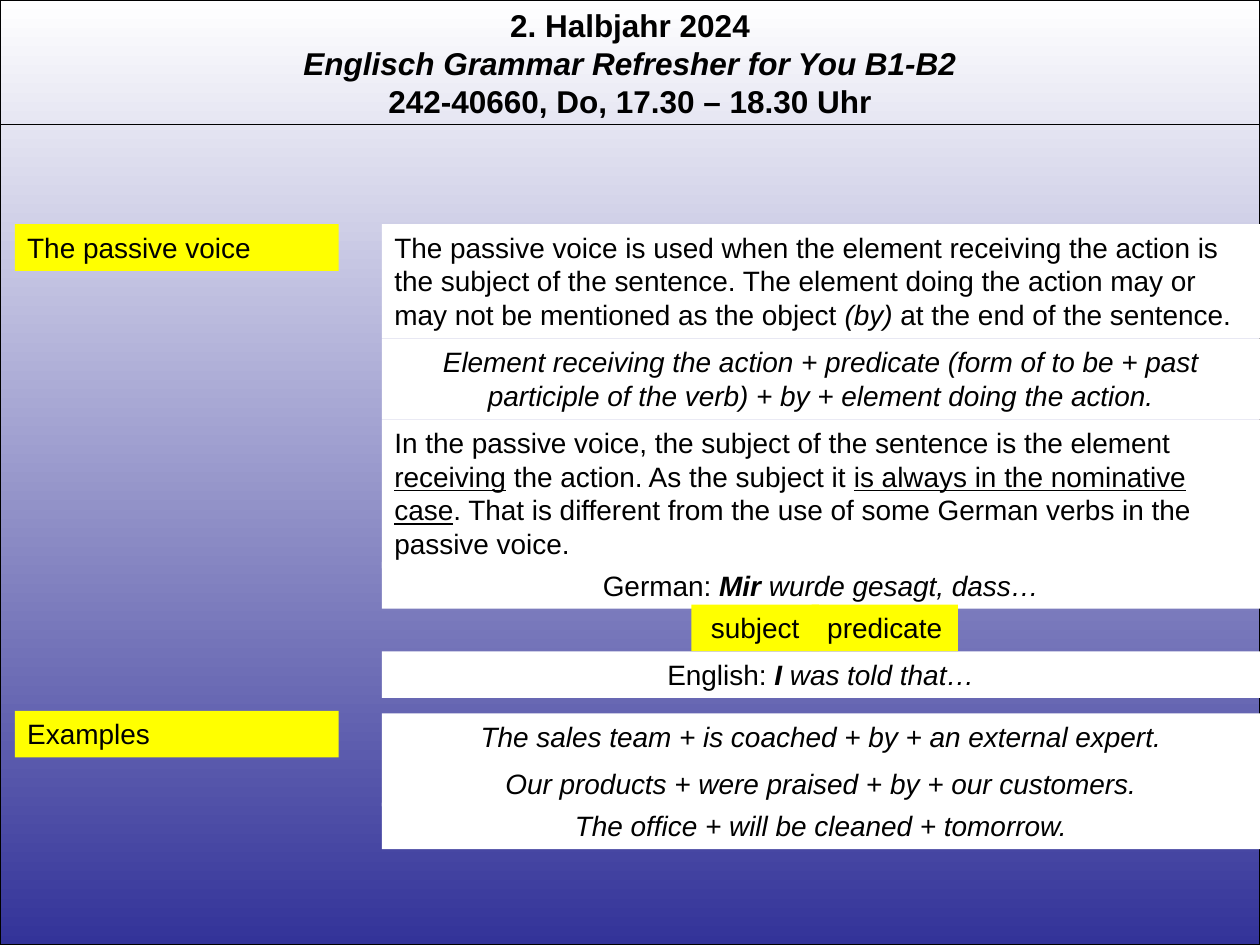
"""Build the grammar slide on the passive voice."""
from dataclasses import dataclass

import pptx
import pptx.dml.color
import pptx.enum.shapes
import pptx.enum.text
import pptx.oxml
import pptx.shapes.autoshape
import pptx.shapes.connector
import pptx.slide
import pptx.util
from pptx.util import Cm

SLIDE_WIDTH, SLIDE_HEIGHT = 25.4, 19.05
LABEL_LEFT, LABEL_WIDTH = 0.3, 6.53
PANEL_LEFT, PANEL_WIDTH = 7.7, 17.7
LINE_HEIGHT = 0.94
TAG_TOP = 12.19
WHITE, YELLOW, BLACK, INDIGO = "FFFFFF", "FFFF00", "000000", "333399"
LEFT = pptx.enum.text.PP_ALIGN.LEFT
CENTER = pptx.enum.text.PP_ALIGN.CENTER
RECTANGLE = pptx.enum.shapes.MSO_SHAPE.RECTANGLE


@dataclass(frozen=True)
class Run:
    text: str
    bold: bool = False
    italic: bool = False
    underline: bool = False


@dataclass(frozen=True)
class Box:
    left: float
    top: float
    width: float
    height: float
    fill: str
    alignment: pptx.enum.text.PP_ALIGN
    runs: tuple[Run, ...]


def panel(top: float, *runs: Run, height: float = LINE_HEIGHT, alignment=CENTER) -> Box:
    return Box(PANEL_LEFT, top, PANEL_WIDTH, height, WHITE, alignment, runs)


def label(top: float, text: str) -> Box:
    return Box(LABEL_LEFT, top, LABEL_WIDTH, LINE_HEIGHT, YELLOW, LEFT, (Run(text),))


def tag(left: float, width: float, text: str) -> Box:
    return Box(left, TAG_TOP, width, LINE_HEIGHT, YELLOW, CENTER, (Run(text),))


TITLE_LINES = (
    Run("2. Halbjahr 2024", bold=True),
    Run("Englisch Grammar Refresher for You B1-B2", bold=True, italic=True),
    Run("242-40660, Do, 17.30 – 18.30 Uhr", bold=True),
)
RULES = (
    label(4.52, "The passive voice"),
    panel(6.83, Run("Element receiving the action + predicate (form of to be + past participle "
                    "of the verb) + by + element doing the action.", italic=True), height=1.63),
    panel(8.46,
          Run("In the passive voice, the subject of the sentence is the element "),
          Run("receiving", underline=True),
          Run(" the action. As the subject it "),
          Run("is always in the nominative case", underline=True),
          Run(". That is different from the use of some German verbs in the passive voice."),
          height=3, alignment=LEFT),
    panel(11.33, Run("German: "), Run("Mir ", bold=True, italic=True),
          Run("wurde gesagt, dass…", italic=True)),
    panel(14.38, Run("The sales team + is coached + by + an external expert.", italic=True)),
    panel(16.18, Run("The office + will be cleaned + tomorrow.", italic=True)),
    panel(13.13, Run("English: "), Run("I", bold=True, italic=True),
          Run(" was told that…", italic=True)),
)
TAGS = (tag(13.94, 2.57, "subject"), tag(16.36, 2.95, "predicate"))
OVERLAYS = (
    panel(15.32, Run("Our products + were praised + by + our customers.", italic=True)),
    panel(4.52,
          Run("The passive voice is used when the element receiving the action is the subject "
              "of the sentence. The element doing the action may or may not be mentioned as "
              "the object "),
          Run("(by) ", italic=True),
          Run("at the end of the sentence."),
          height=2.31, alignment=LEFT),
    label(14.33, "Examples"),
)


def color(value: str) -> pptx.dml.color.RGBColor:
    return pptx.dml.color.RGBColor.from_string(value)


def add_run(paragraph, run: Run, size: int) -> None:
    text_run = paragraph.add_run()
    text_run.text = run.text
    font = text_run.font
    font.name, font.size = "Arial", pptx.util.Pt(size)
    font.bold, font.italic, font.underline = run.bold, run.italic, run.underline
    font.color.rgb = color(BLACK)


def format_frame(text_frame) -> None:
    text_frame.word_wrap = True
    text_frame.auto_size = pptx.enum.text.MSO_AUTO_SIZE.SHAPE_TO_FIT_TEXT
    text_frame.vertical_anchor = pptx.enum.text.MSO_ANCHOR.TOP


def draw_box(shapes, box: Box) -> None:
    shape = shapes.add_shape(
        RECTANGLE, Cm(box.left), Cm(box.top), Cm(box.width), Cm(box.height))
    shape.shadow.inherit = False
    shape.fill.solid()
    shape.fill.fore_color.rgb = color(box.fill)
    shape.line.fill.background()
    format_frame(shape.text_frame)
    paragraph = shape.text_frame.paragraphs[0]
    paragraph.alignment = box.alignment
    for run in box.runs:
        add_run(paragraph, run, 16)


def draw_title(slide: pptx.slide.Slide) -> None:
    title = slide.shapes.title
    title.left, title.top = Cm(0), Cm(0)
    title.width, title.height = Cm(SLIDE_WIDTH), Cm(2.57)
    text_frame = title.text_frame
    format_frame(text_frame)
    for index, line in enumerate(TITLE_LINES):
        paragraph = text_frame.add_paragraph() if index else text_frame.paragraphs[0]
        paragraph.alignment = CENTER
        add_run(paragraph, line, 18)


def draw_backdrop(slide: pptx.slide.Slide) -> None:
    backdrop = slide.shapes.add_shape(
        RECTANGLE, Cm(0), Cm(0), Cm(SLIDE_WIDTH), Cm(SLIDE_HEIGHT))
    backdrop.shadow.inherit = False
    backdrop.fill.gradient()
    backdrop.fill.gradient_angle = 270
    for stop, position, value in zip(backdrop.fill.gradient_stops, (0, 1), (WHITE, INDIGO)):
        stop.position = position
        stop.color.rgb = color(value)
    backdrop.line.color.rgb = color(BLACK)
    backdrop.line.width = pptx.util.Pt(0.75)
    slide.shapes.title.element.addprevious(backdrop.element)


def draw_divider(slide: pptx.slide.Slide) -> None:
    divider = slide.shapes.add_connector(
        pptx.enum.shapes.MSO_CONNECTOR.STRAIGHT, Cm(0), Cm(2.51), Cm(SLIDE_WIDTH), Cm(2.51))
    divider.line.color.rgb = color(BLACK)
    divider.line.width = pptx.util.Pt(0.75)
    divider.element.spPr.append(pptx.oxml.parse_xml(
        '<a:effectLst xmlns:a="http://schemas.openxmlformats.org/drawingml/2006/main"/>'))


def main() -> None:
    presentation = pptx.Presentation()
    presentation.slide_width, presentation.slide_height = Cm(SLIDE_WIDTH), Cm(SLIDE_HEIGHT)
    slide = presentation.slides.add_slide(presentation.slide_layouts.get_by_name("Title Only"))
    draw_title(slide)
    draw_backdrop(slide)
    draw_divider(slide)
    for box in RULES:
        draw_box(slide.shapes, box)
    tag_group = slide.shapes.add_group_shape()
    for box in TAGS:
        draw_box(tag_group.shapes, box)
    for box in OVERLAYS:
        draw_box(slide.shapes, box)
    presentation.save("out.pptx")


if __name__ == "__main__":
    main()
